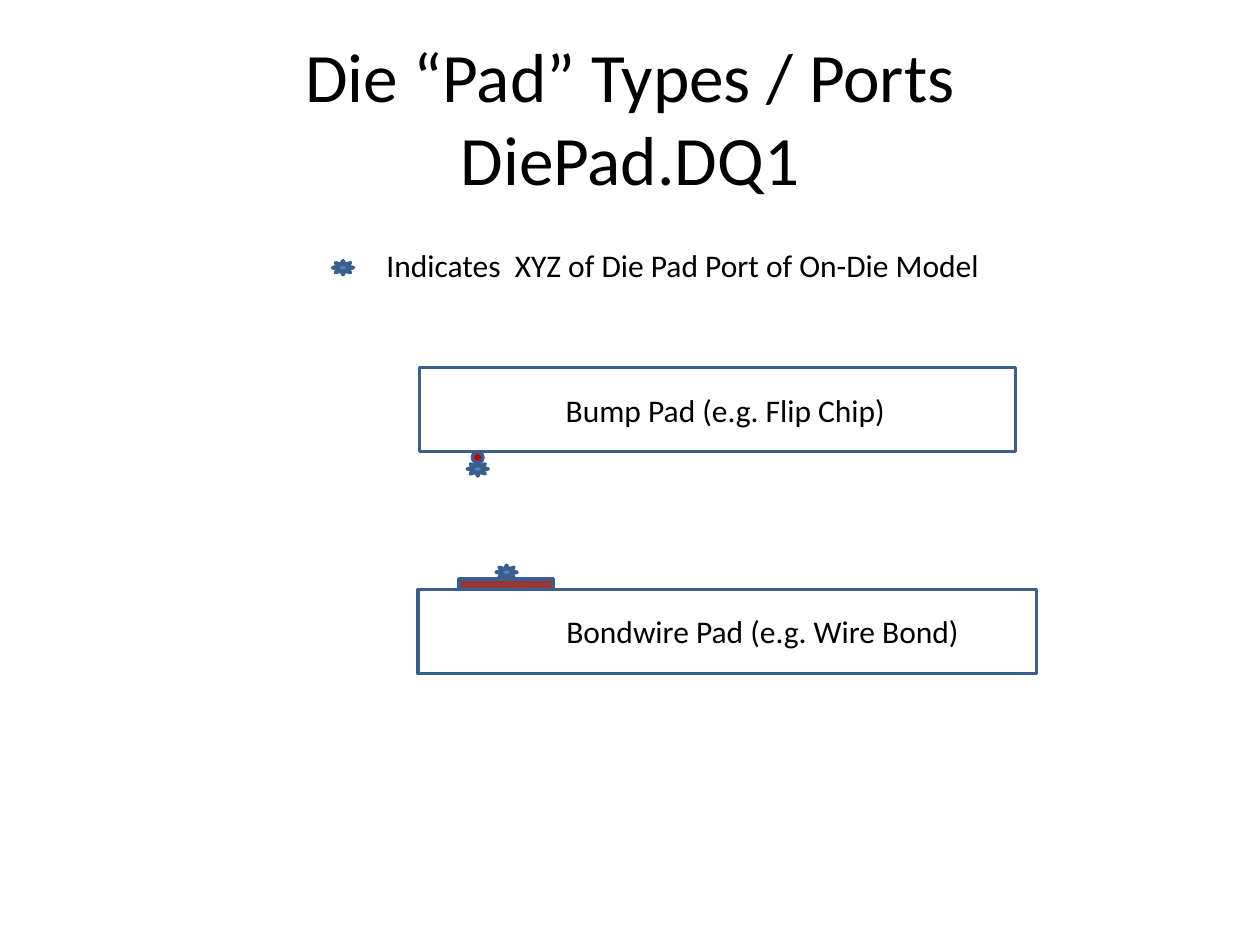
from pptx import Presentation
from pptx.dml.color import RGBColor
from pptx.enum import shapes, text
from pptx.util import Pt

KIND = shapes.MSO_SHAPE
LINE = "3A5F8C"
SUN = "4F81BD"

TITLE = ("Die “Pad” Types / Ports\vDiePad.DQ1", 36, 21.6, 648, 90)
SHAPES = [
    (KIND.RECTANGLE, 239.8, 210, 340.6, 48, None),
    (KIND.RECTANGLE, 238.8, 336.8, 353.5, 48, None),
    (KIND.OVAL, 270, 258.4, 6, 6, "C00000"),
    (KIND.RECTANGLE, 262.2, 331, 54, 6, "953735"),
]
PORTS = [(273, 268), (289.5, 327), (196, 153)]
PORT_W, PORT_H = 12, 8
LABELS = [
    ("Bump Pad (e.g. Flip Chip)", 316.2, 219.6, 199.4, 29),
    ("Bondwire Pad (e.g. Wire Bond)", 316.5, 346.4, 242, 29),
    ("Indicates  XYZ of Die Pad Port of On-Die Model", 213.8, 137, 357, 29),
]


def color(value):
    return RGBColor.from_string(value)


def add_box(s, kind, x, y, w, h, fill):
    sp = s.shapes.add_shape(kind, Pt(x), Pt(y), Pt(w), Pt(h))
    sp.shadow.inherit = False
    if fill:
        sp.fill.solid()
        sp.fill.fore_color.rgb = color(fill)
    else:
        sp.fill.background()
    sp.line.color.rgb = color(LINE)
    sp.line.width = Pt(2)


def add_text(s, words, x, y, w, h, size=18, wrap=False,
             align=text.PP_ALIGN.LEFT, anchor=text.MSO_ANCHOR.TOP):
    tf = s.shapes.add_textbox(Pt(x), Pt(y), Pt(w), Pt(h)).text_frame
    tf.word_wrap = wrap
    tf.vertical_anchor = anchor
    p = tf.paragraphs[0]
    p.text = words
    p.alignment = align
    p.font.name = "Calibri"
    p.font.size = Pt(size)
    p.font.color.rgb = color("000000")
    return tf


def main():
    prs = Presentation()
    prs.slide_width, prs.slide_height = Pt(720), Pt(540)
    s = prs.slides.add_slide(prs.slide_layouts[6])
    add_text(s, *TITLE, size=39.6, wrap=True,
             align=text.PP_ALIGN.CENTER, anchor=text.MSO_ANCHOR.MIDDLE)
    for shape in SHAPES:
        add_box(s, *shape)
    for cx, cy in PORTS:
        add_box(s, KIND.SUN, cx - PORT_W / 2, cy - PORT_H / 2, PORT_W, PORT_H, SUN)
    for label in LABELS:
        tf = add_text(s, *label)
        tf.auto_size = text.MSO_AUTO_SIZE.SHAPE_TO_FIT_TEXT
    prs.save("out.pptx")


if __name__ == "__main__":
    main()
